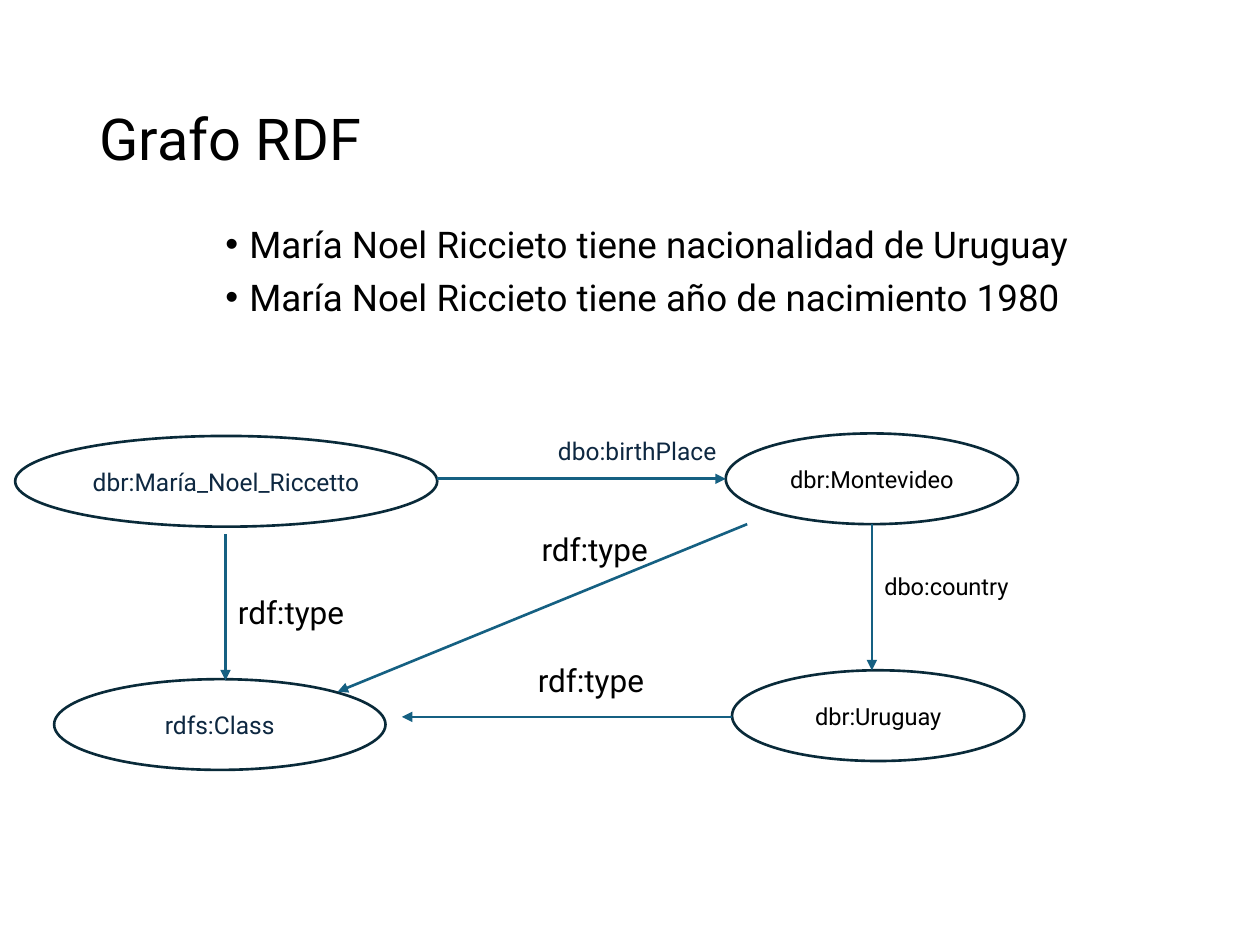
from dataclasses import dataclass

from lxml.etree import SubElement
from pptx import Presentation
from pptx.dml.color import RGBColor
from pptx.enum.shapes import MSO_CONNECTOR, MSO_SHAPE
from pptx.enum.text import MSO_ANCHOR, MSO_AUTO_SIZE, PP_ALIGN
from pptx.oxml.ns import qn
from pptx.util import Inches, Pt


@dataclass(frozen=True)
class Theme:
    """Colours, font and type sizes of the slide."""
    font: str = "Roboto"
    black: RGBColor = RGBColor(0x00, 0x00, 0x00)
    white: RGBColor = RGBColor(0xFF, 0xFF, 0xFF)
    navy: RGBColor = RGBColor(0x0E, 0x28, 0x41)
    outline: RGBColor = RGBColor(0x09, 0x2A, 0x39)
    arrow: RGBColor = RGBColor(0x15, 0x60, 0x82)
    title: float = 33
    body: float = 21
    relation: float = 18
    term: float = 14
    small: float = 13.5
    stroke: float = 1.5


THEME = Theme()


def style_runs(paragraph, size, color):
    """Set font, size and colour on every run of a paragraph."""
    for run in paragraph.runs:
        run.font.name = THEME.font
        run.font.size = Pt(size)
        run.font.color.rgb = color


def add_text(slide, box, lines, size, color=THEME.black, wrap=True):
    """Place lines of text in a box and return its text frame."""
    frame = slide.shapes.add_textbox(*map(Inches, box)).text_frame
    frame.word_wrap = wrap
    frame.text = "\n".join(lines)
    for paragraph in frame.paragraphs:
        style_runs(paragraph, size, color)
    return frame


def add_title(slide, box, title):
    """Place the vertically centred slide title."""
    frame = add_text(slide, box, [title], THEME.title)
    frame.vertical_anchor = MSO_ANCHOR.MIDDLE
    frame.paragraphs[0].line_spacing = 0.9


def add_statements(slide, box, statements):
    """Place the bulleted statements."""
    frame = add_text(slide, box, statements, THEME.body)
    indent = Inches(0.19)
    for paragraph in frame.paragraphs:
        paragraph.line_spacing = 0.9
        paragraph.space_before = Pt(7.5)
        properties = paragraph._p.get_or_add_pPr()
        properties.set("marL", str(indent))
        properties.set("indent", str(-indent))
        SubElement(properties, qn("a:buFont"), typeface="Arial")
        SubElement(properties, qn("a:buChar"), char="•")


def add_node(slide, box, name, size, color):
    """Place one resource of the graph as a labelled ellipse."""
    node = slide.shapes.add_shape(MSO_SHAPE.OVAL, *map(Inches, box))
    node.shadow.inherit = False
    node.fill.solid()
    node.fill.fore_color.rgb = THEME.white
    node.line.color.rgb = THEME.outline
    node.line.width = Pt(THEME.stroke)
    frame = node.text_frame
    frame.text = name
    frame.vertical_anchor = MSO_ANCHOR.MIDDLE
    frame.paragraphs[0].alignment = PP_ALIGN.CENTER
    style_runs(frame.paragraphs[0], size, color)


def add_arrow(slide, start, end):
    """Draw an arrow from start to end."""
    arrow = slide.shapes.add_connector(
        MSO_CONNECTOR.STRAIGHT, *map(Inches, (*start, *end)))
    arrow.line.color.rgb = THEME.arrow
    arrow.line.width = Pt(THEME.stroke)
    SubElement(arrow.line._get_or_add_ln(), qn("a:tailEnd"), type="triangle")
    SubElement(arrow._element.spPr, qn("a:effectLst"))


def add_graph(slide, box):
    """Place the nodes, arrows and relation labels of the RDF graph."""
    left, top, _, _ = box
    node_height = 0.72
    nodes = [
        (5.64, 0.03, 2.32, "dbr:Montevideo", THEME.small, THEME.black),
        (0, 0.05, 3.35, "dbr:María_Noel_Riccetto", THEME.term, THEME.navy),
        (5.69, 1.91, 2.32, "dbr:Uruguay", THEME.small, THEME.black),
        (0.31, 1.98, 2.63, "rdfs:Class", THEME.term, THEME.navy),
    ]
    arrows = [
        ((3.35, 0.39), (5.64, 0.39)),
        ((6.8, 0.75), (6.8, 1.91)),
        ((1.67, 0.83), (1.67, 1.99)),
        ((5.69, 2.28), (3.07, 2.28)),
        ((5.81, 0.75), (2.56, 2.08)),
    ]
    labels = [
        (4.21, 0, 3.21, 0.34, "dbo:birthPlace", THEME.term, THEME.navy, True),
        (6.8, 1.08, 1.2, 0.33, "dbo:country", THEME.small, THEME.black, False),
    ] + [
        (x, y, 1.1, 0.4, "rdf:type", THEME.relation, THEME.black, False)
        for x, y in [(1.67, 1.25), (4.08, 0.75), (4.05, 1.79)]
    ]
    for x, y, width, name, size, color in nodes:
        add_node(slide, (left + x, top + y, width, node_height), name, size, color)
    for ends in arrows:
        add_arrow(slide, *((left + x, top + y) for x, y in ends))
    for x, y, width, height, relation, size, color, wrap in labels:
        frame = add_text(slide, (left + x, top + y, width, height),
                         [relation], size, color, wrap)
        frame.auto_size = MSO_AUTO_SIZE.SHAPE_TO_FIT_TEXT


def main():
    """Build the slide and save it."""
    presentation = Presentation()
    presentation.slide_width = Inches(10)
    presentation.slide_height = Inches(7.5)
    slide = presentation.slides.add_slide(presentation.slide_layouts[6])
    add_title(slide, (0.69, 0.4, 8.62, 1.45), "Grafo RDF")
    add_statements(slide, (1.69, 1.75, 7.54, 1.01), [
        "María Noel Riccieto tiene nacionalidad de Uruguay",
        "María Noel Riccieto tiene año de nacimiento 1980",
    ])
    add_graph(slide, (0.12, 3.41, 8.01, 2.7))
    presentation.save("out.pptx")


if __name__ == "__main__":
    main()
